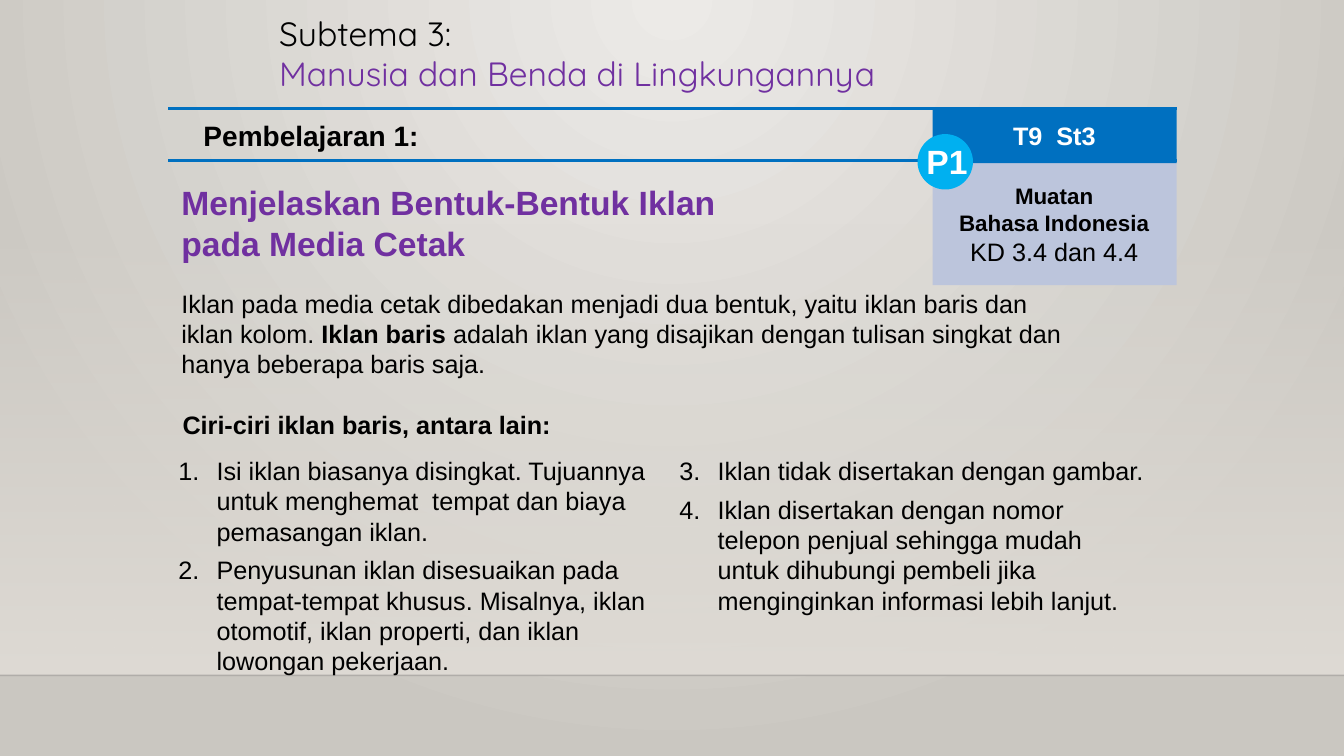
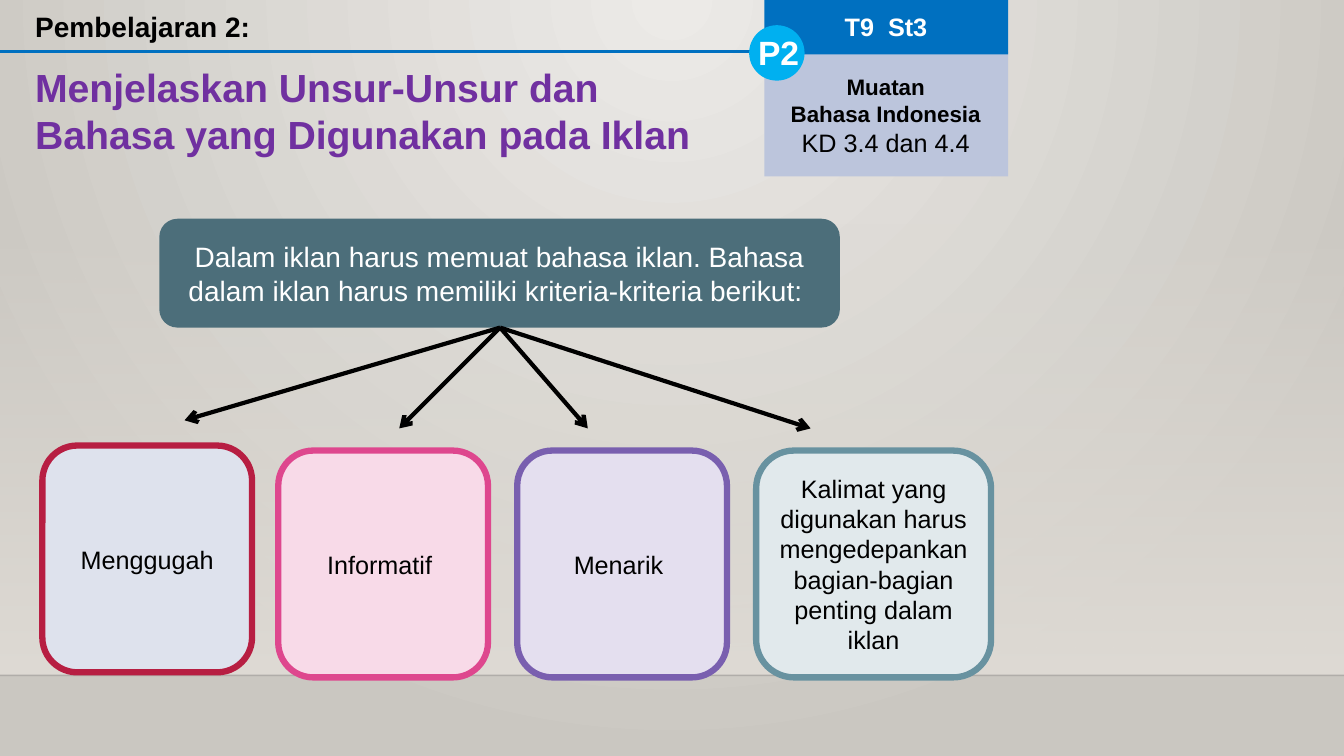
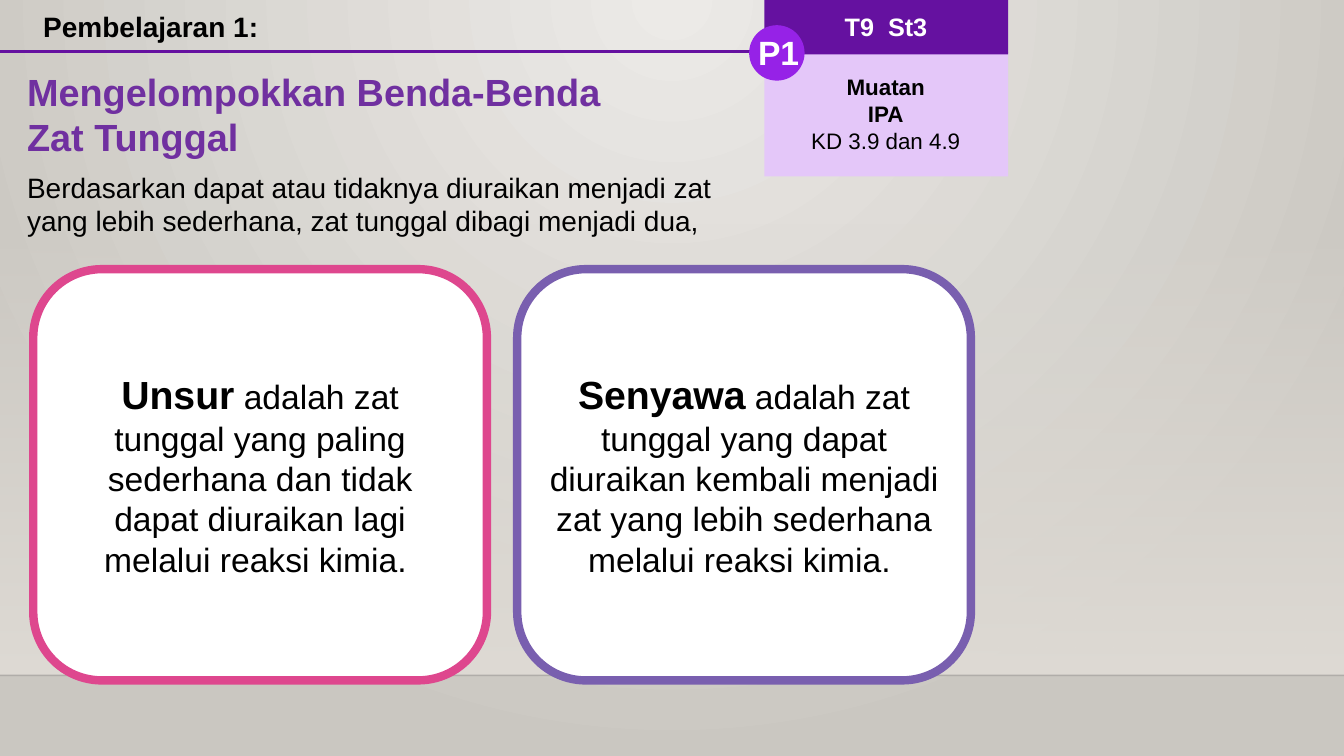
import pptx
import pptx.util
import pptx.dml.color
import pptx.enum.shapes
import pptx.enum.text
import pptx.oxml
import pptx.oxml.ns

Inches = pptx.util.Inches
Pt = pptx.util.Pt
SHAPE = pptx.enum.shapes.MSO_SHAPE
ALIGN = pptx.enum.text.PP_ALIGN
ANCHOR = pptx.enum.text.MSO_ANCHOR
FIT = pptx.enum.text.MSO_AUTO_SIZE

COLORS = {
    "black": "000000", "white": "FFFFFF", "title": "7030A0",
    "bg_light": "ECEAE7", "bg_dark": "CAC7C1", "wall": "DFDBD5", "floor": "000001",
    "blue": "0070C0", "blue_pale": "BCC5DC", "cyan": "00B0F0",
    "violet": "6511A0", "violet_pale": "E4C7F9", "violet_bright": "9622E7",
    "slate": "4C6E7A", "red": "B71E42", "red_pale": "DEE2ED",
    "pink": "DE478E", "pink_pale": "F8DAE8",
    "purple": "795FAF", "purple_pale": "E4DFEF",
    "teal": "6892A0", "teal_pale": "E1E9EC",
}
# Header colours: band, panel, badge
BLUE_THEME = ("blue", "blue_pale", "cyan")
VIOLET_THEME = ("violet", "violet_pale", "violet_bright")


def rgb(name):
    return pptx.dml.color.RGBColor.from_string(COLORS[name])


def add_xml(parent, tag, **attributes):
    child = pptx.oxml.parse_xml(f"<a:{tag} {pptx.oxml.ns.nsdecls('a')}/>")
    for name, value in attributes.items():
        child.set(name, str(value))
    parent.append(child)
    return child


# Text
def fmt(size, color="black", bold=False, name="Arial"):
    return {"size": Pt(size), "color": color, "bold": bold, "name": name}


def write(tf, paragraphs, align=ALIGN.LEFT):
    """Fill a frame; each paragraph is a list of (text, format) runs."""
    for i, runs in enumerate(paragraphs):
        p = tf.paragraphs[0] if i == 0 else tf.add_paragraph()
        p.alignment = align
        for text, style in runs:
            r = p.add_run()
            r.text = text
            for key, value in style.items():
                if key == "color":
                    r.font.color.rgb = rgb(value)
                else:
                    setattr(r.font, key, value)


def add_text(s, box, paragraphs, align=ALIGN.LEFT, wrap=True):
    tf = s.shapes.add_textbox(*map(Inches, box)).text_frame
    tf.word_wrap = wrap
    tf.auto_size = FIT.SHAPE_TO_FIT_TEXT
    write(tf, paragraphs, align)
    return tf


def add_numbered(s, box, items, start):
    tf = add_text(s, box, [[(item, fmt(18))] for item in items])
    for i, p in enumerate(tf.paragraphs):
        if i:
            p.space_before = Pt(6)
        pPr = p._p.get_or_add_pPr()
        pPr.set("marL", str(Inches(0.38)))
        pPr.set("indent", str(-Inches(0.38)))
        add_xml(pPr, "buAutoNum", type="arabicPeriod", startAt=start)


# Shapes and lines
def add_shape(s, kind, box, fill=None, line=None, width=0):
    sp = s.shapes.add_shape(kind, *map(Inches, box))
    sp.shadow.inherit = False
    if fill:
        sp.fill.solid()
        sp.fill.fore_color.rgb = rgb(fill)
    else:
        sp.fill.background()
    if line:
        sp.line.color.rgb = rgb(line)
        sp.line.width = Pt(width)
    else:
        sp.line.fill.background()
    return sp


def add_card(s, box, runs, fill=None, line=None, width=4.5, align=ALIGN.CENTER):
    sp = add_shape(s, SHAPE.ROUNDED_RECTANGLE, box, fill, line, width)
    sp.text_frame.word_wrap = True
    sp.text_frame.vertical_anchor = ANCHOR.MIDDLE
    write(sp.text_frame, [runs], align)
    return sp


def add_line(s, start, end, color, width, arrow=False):
    line = s.shapes.add_connector(pptx.enum.shapes.MSO_CONNECTOR.STRAIGHT,
                                  *map(Inches, start + end))
    line.line.color.rgb = rgb(color)
    line.line.width = Pt(width)
    if arrow:
        add_xml(line.line._get_or_add_ln(), "tailEnd", type="arrow")
    add_xml(line.element.spPr, "effectLst")
    return line


# Shared parts
def set_gradient(fill, first, last):
    fill.gradient()
    for stop, color, position in zip(fill.gradient_stops, (first, last), (0, 1)):
        stop.color.rgb = rgb(color)
        stop.position = position


def build_master(prs, s):
    """Give the master its background, wall and floor line, drawn via slide s."""
    master = prs.slide_master
    set_gradient(master.background.fill, "bg_light", "bg_dark")
    grad = master.element.xpath(".//p:bgPr/a:gradFill")[0]
    for lin in grad.xpath("a:lin"):
        grad.remove(lin)
    radial = add_xml(grad, "path", path="circle")
    add_xml(radial, "fillToRect", l=43000, t=0, r=43000, b=100000)

    wall = add_shape(s, SHAPE.RECTANGLE, (0, 2.21, 13.33, 4.49), "wall")
    set_gradient(wall.fill, "wall", "wall")
    wall.fill.gradient_angle = 270
    add_xml(wall.element.xpath(".//a:gs/a:srgbClr")[0], "alpha", val=0)
    floor = add_line(s, (0, 6.7), (13.33, 6.7), "floor", 1)
    add_xml(floor.element.xpath(".//a:ln//a:srgbClr")[0], "alpha", val=20000)
    for number, part in enumerate((wall, floor), 101):
        part.element.xpath(".//p:cNvPr")[0].set("id", str(number))
        master.shapes.element.append(part.element)


def add_header(s, lesson, badge, subject, kd, theme, left=0, top=0,
               kd_size=18, lesson_left=0.25):
    band, panel, dot = theme

    def at(x, y, w, h):
        return left + x, top + y, w, h

    add_line(s, (left + 10, top + 0.51), (left, top + 0.51), band, 2.25)
    add_shape(s, SHAPE.RECTANGLE, at(7.58, 0.53, 2.42, 1.22), panel)
    add_shape(s, SHAPE.RECTANGLE, at(7.58, 0, 2.42, 0.54), band)
    add_text(s, at(8.28, 0.06, 1.03, 0.4), [[("T9  St3", fmt(18, "white", True))]],
             wrap=False)
    add_shape(s, SHAPE.OVAL, at(7.43, 0.25, 0.55, 0.55), dot)
    add_text(s, at(7.42, 0.27, 0.61, 0.5), [[(badge, fmt(24, "white", True))]],
             wrap=False)
    add_text(s, at(7.73, 0.68, 2.11, 0.94),
             [[("Muatan", fmt(16, bold=True))], [(subject, fmt(16, bold=True))],
              [(kd, fmt(kd_size))]], ALIGN.CENTER, wrap=False)
    add_text(s, at(lesson_left, 0.05, 7.13, 0.44), [[(lesson, fmt(20, bold=True))]])


def add_title(s, box, text, size):
    add_text(s, box, [[(text, fmt(size, "title", True))]])


# Slides
def build_classified_ads(s):
    add_card(s, (1.7, 4.02, 8.74, 0.39),
             [("Ciri-ciri iklan baris, antara lain:", fmt(18, bold=True))],
             align=ALIGN.LEFT).adjustments[0] = 0.11
    add_text(s, (2.67, 0.08, 7.5, 0.91),
             [[("Subtema 3:", fmt(24, name="Quicksand"))],
              [("Manusia dan Benda di Lingkungannya",
                fmt(24, "title", name="Quicksand"))]])
    add_header(s, "Pembelajaran 1:", "P1", "Bahasa Indonesia", "KD 3.4 dan 4.4",
               BLUE_THEME, left=1.67, top=1.08)
    add_line(s, (11.67, 1.08), (1.67, 1.08), "blue", 2.25)
    add_title(s, (1.7, 1.76, 6.21, 0.92),
              "Menjelaskan Bentuk-Bentuk Iklan pada Media Cetak", 24)
    add_text(s, (1.7, 2.81, 9.04, 1.01), [[
        ("Iklan pada media cetak dibedakan menjadi dua bentuk, yaitu iklan baris "
         "dan iklan kolom. ", fmt(18)),
        ("Iklan baris ", fmt(18, bold=True)),
        ("adalah iklan yang disajikan dengan tulisan singkat dan hanya beberapa "
         "baris saja.", fmt(18))]])
    columns = [
        ["Isi iklan biasanya disingkat. Tujuannya untuk menghemat  tempat dan biaya "
         "pemasangan iklan.",
         "Penyusunan iklan disesuaikan pada tempat-tempat khusus. Misalnya, iklan "
         "otomotif, iklan properti, dan iklan lowongan pekerjaan."],
        ["Iklan tidak disertakan dengan gambar.",
         "Iklan disertakan dengan nomor telepon penjual sehingga mudah untuk "
         "dihubungi pembeli jika menginginkan informasi lebih lanjut."],
    ]
    for i, items in enumerate(columns):
        add_numbered(s, (1.67 + 4.97 * i, 4.47, 4.87, 2.25), items, 1 + 2 * i)


def build_ad_language(s):
    add_header(s, "Pembelajaran 2:", "P2", "Bahasa Indonesia", "KD 3.4 dan 4.4",
               BLUE_THEME)
    add_title(s, (0.25, 0.58, 7.13, 1.04),
              "Menjelaskan Unsur-Unsur dan Bahasa yang Digunakan pada Iklan", 28)
    add_card(s, (1.58, 2.17, 6.75, 1.08),
             [("Dalam iklan harus memuat bahasa iklan. Bahasa dalam iklan harus "
               "memiliki kriteria-kriteria berikut: ", fmt(20, "white"))], "slate")
    # Criterion: text, colour, left, top, width, arrow tip
    criteria = [
        ("Menggugah", "red", 0.42, 4.42, 2.08, (1.83, 4.17)),
        ("Informatif ", "pink", 2.76, 4.47, 2.08, (3.96, 4.25)),
        ("Menarik ", "purple", 5.13, 4.47, 2.08, (5.83, 4.25)),
        ("Kalimat yang digunakan harus mengedepankan bagian-bagian penting dalam "
         "iklan", "teal", 7.5, 4.47, 2.33, (8.04, 4.25)),
    ]
    for text, color, left, top, width, tip in criteria:
        add_card(s, (left, top, width, 2.25), [(text, fmt(18))],
                 color + "_pale", color)
        add_line(s, (4.96, 3.25), tip, "black", 3, arrow=True)


def build_pure_substances(s):
    add_title(s, (0.17, 0.63, 6.42, 1.01),
              "Mengelompokkan Benda-Benda Zat Tunggal", 27)
    add_header(s, "Pembelajaran 1:", "P1", "IPA", "KD 3.9 dan 4.9", VIOLET_THEME,
               kd_size=16, lesson_left=0.33)
    add_text(s, (0.17, 1.64, 7.17, 0.77),
             [[("Berdasarkan dapat atau tidaknya diuraikan menjadi zat yang lebih "
                "sederhana, zat tunggal dibagi menjadi dua,", fmt(20))]])
    substances = [
        ("Unsur", "adalah zat tunggal yang paling sederhana dan tidak dapat "
         "diuraikan lagi melalui reaksi kimia. ", "pink"),
        ("Senyawa", "adalah zat tunggal yang dapat diuraikan kembali menjadi zat "
         "yang lebih sederhana melalui reaksi kimia. ", "purple"),
    ]
    for i, (term, meaning, color) in enumerate(substances):
        add_card(s, (0.33 + 4.8 * i, 2.67, 4.5, 4.08),
                 [(term, fmt(28, bold=True)), (" " + meaning, fmt(24))],
                 "white", color, 6)


def main():
    prs = pptx.Presentation()
    prs.slide_width, prs.slide_height = Inches(13.33), Inches(7.5)
    builders = (build_classified_ads, build_ad_language, build_pure_substances)
    slides = [prs.slides.add_slide(prs.slide_layouts[6]) for _ in builders]
    build_master(prs, slides[0])
    for s, build in zip(slides, builders):
        build(s)
    prs.save("out.pptx")


if __name__ == "__main__":
    main()
